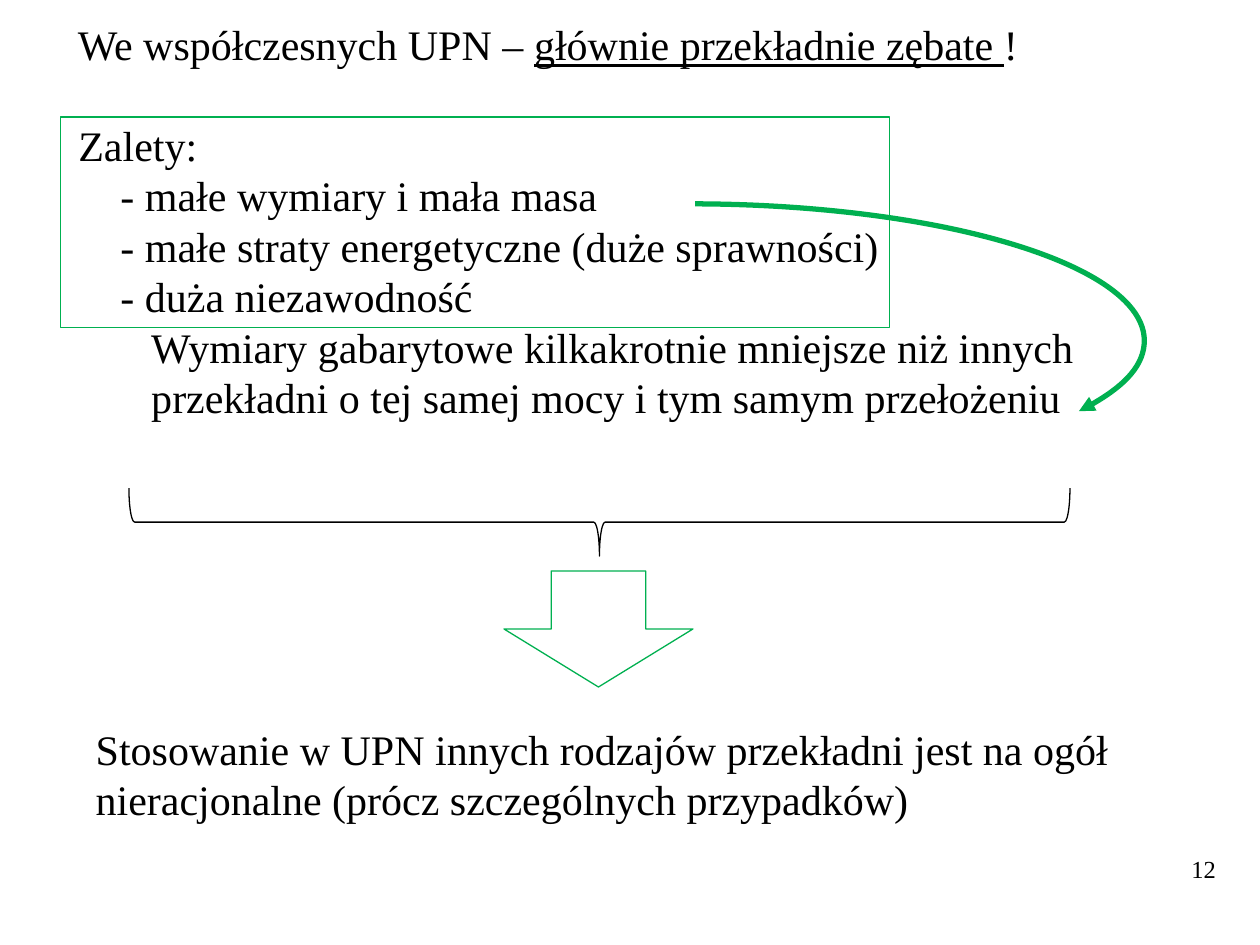
from lxml.etree import SubElement
from pptx import Presentation
from pptx.dml.color import RGBColor
from pptx.enum.shapes import MSO_SHAPE as SHAPE
from pptx.enum.text import MSO_ANCHOR as ANCHOR, PP_ALIGN as ALIGN
from pptx.oxml.ns import qn
from pptx.util import Cm, Pt

FONT = "Times New Roman"
BLACK, WHITE, GREEN = "000000", "FFFFFF", "00B050"
INSETS = (0.25, 0.13, 0.25, 0.13)


def rgb(value):
    return RGBColor.from_string(value)


def write(sp, paragraphs, size=24, align=ALIGN.LEFT, insets=INSETS):
    """Each paragraph is (indent in cm, [(text, underlined), ...])."""
    tf = sp.text_frame
    tf.word_wrap = True
    tf.vertical_anchor = ANCHOR.TOP
    tf.margin_left, tf.margin_top, tf.margin_right, tf.margin_bottom = map(Cm, insets)
    for i, (indent, runs) in enumerate(paragraphs):
        p = tf.add_paragraph() if i else tf.paragraphs[0]
        if indent:
            p._p.get_or_add_pPr().set("marL", str(Cm(indent)))
        p.alignment = align
        p.line_spacing = Pt(size * 1.2)
        p.space_before = Pt(0)
        for text, underlined in runs:
            r = p.add_run()
            r.text = text
            r.font.name = FONT
            r.font.size = Pt(size)
            r.font.underline = underlined
            r.font.color.rgb = rgb(BLACK)


def plain(*lines, indent=0):
    return [(indent, [(line, False)]) for line in lines]


def add_text(s, box, paragraphs, **style):
    write(s.shapes.add_textbox(*map(Cm, box)), paragraphs, **style)


def add_outline(s, kind, box, color, width=0.75, fill=None):
    sp = s.shapes.add_shape(kind, *map(Cm, box))
    sp.shadow.inherit = False
    if fill:
        sp.fill.solid()
        sp.fill.fore_color.rgb = rgb(fill)
    else:
        sp.fill.background()
    sp.line.color.rgb = rgb(color)
    sp.line.width = Pt(width)
    return sp


def add_arc_arrow(s, box, start, end):
    sp = add_outline(s, SHAPE.ARC, box, GREEN, width=3)
    # Arc angles are stored in 60000ths of a degree, adjustments in 100000ths
    sp.adjustments[0] = start * 0.6
    sp.adjustments[1] = end * 0.6
    SubElement(sp.line._get_or_add_ln(), qn("a:tailEnd"), type="triangle")


def main():
    prs = Presentation()
    prs.slide_width, prs.slide_height = Cm(25.4), Cm(19.05)
    s = prs.slides.add_slide(prs.slide_layouts[5])

    # Title
    title = s.shapes.title
    title.left, title.top, title.width, title.height = map(Cm, (1.32, 0.25, 22.56, 1.3))
    write(title, [(0, [("We współczesnych UPN – ", False),
                       ("głównie przekładnie zębate ", True), ("!", False)])])

    # Framed list of advantages
    frame = add_outline(s, SHAPE.RECTANGLE, (1.22, 2.36, 16.71, 4.24), GREEN, fill=WHITE)
    advantages = plain("- małe wymiary i mała masa",
                       "- małe straty energetyczne (duże sprawności)",
                       "- duża niezawodność", indent=0.85)
    write(frame, plain("Zalety:") + advantages, insets=(0.36, 0.05, 0, 0))

    # Consequence of the small size
    add_text(s, (2.8, 6.35, 21, 2.3),
             plain("Wymiary gabarytowe kilkakrotnie mniejsze niż innych",
                   "przekładni o tej samej mocy i tym samym przełożeniu"))
    add_arc_arrow(s, (4.78, 4.11, 18.29, 5.51), 271.91, 10.32)

    # Brace and arrow leading to the conclusion
    brace = add_outline(s, SHAPE.LEFT_BRACE, (11.4, 1.04, 1.37, 18.97), BLACK)
    brace.rotation = 270
    add_outline(s, SHAPE.DOWN_ARROW, (10.16, 11.51, 3.81, 2.34), GREEN)
    add_text(s, (1.68, 14.45, 21.39, 2.31),
             plain("Stosowanie w UPN innych rodzajów przekładni jest na ogół "
                   "nieracjonalne (prócz szczególnych przypadków)"))

    # Page number
    add_text(s, (23.24, 17.09, 1.52, 1.27), plain("12"), size=14, align=ALIGN.RIGHT)

    prs.save("out.pptx")


if __name__ == "__main__":
    main()
